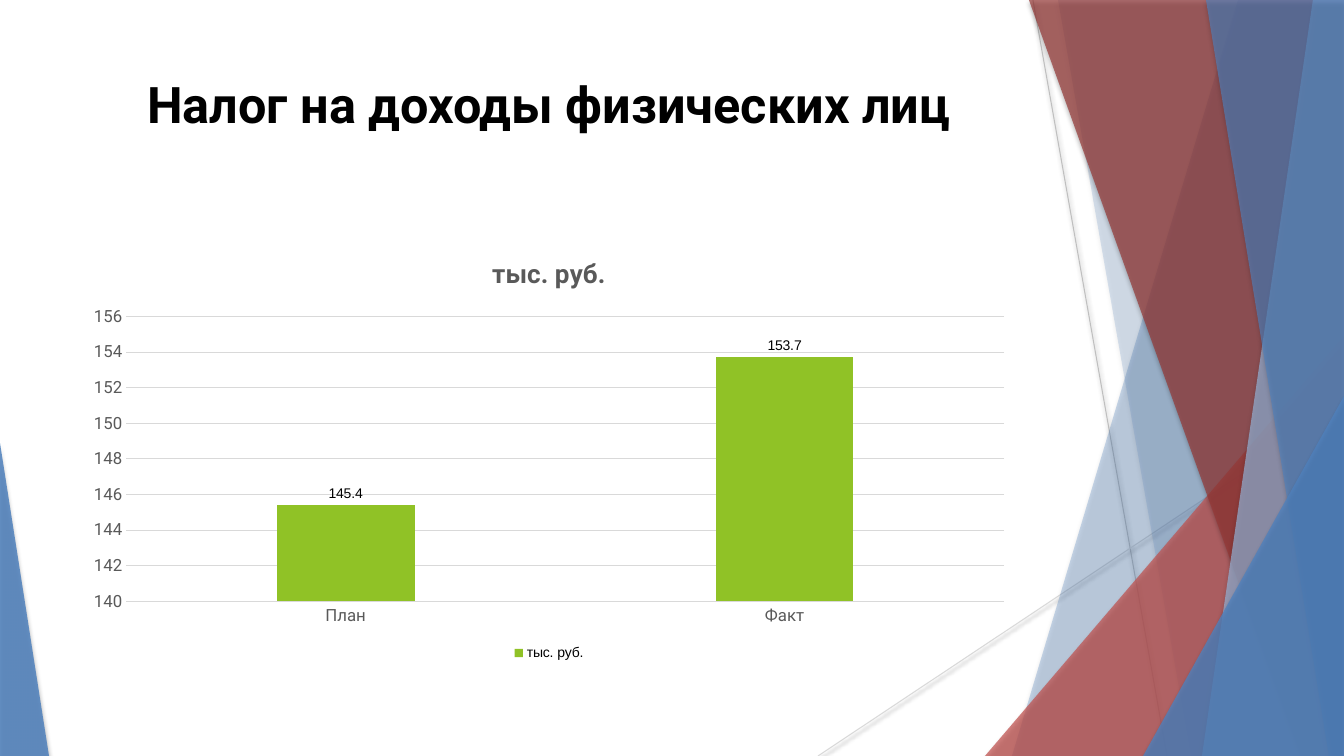
"""Builds a slide with a column chart of personal income tax, plan against fact."""
from lxml.etree import SubElement
from pptx import Presentation
from pptx.chart.data import CategoryChartData
from pptx.dml.color import RGBColor
from pptx.enum.chart import XL_CHART_TYPE, XL_LABEL_POSITION, XL_LEGEND_POSITION, XL_TICK_MARK
from pptx.enum.shapes import MSO_CONNECTOR, MSO_SHAPE
from pptx.enum.text import MSO_ANCHOR, PP_ALIGN
from pptx.oxml.ns import qn
from pptx.util import Pt

EMU_PER_PX = 914400 / 100.8
WIDTH, HEIGHT = 1344, 756


def px(length):
    return round(length * EMU_PER_PX)


def color(hex_string):
    return RGBColor.from_string(hex_string)


class Deck:
    FONT = "Roboto"
    LABEL_FONT = "Arial"
    BLACK, GRAY, GRID = "000000", "595959", "D9D9D9"
    BLUE, RED, DARK_RED, PALE_BLUE = "4F81BD", "C0504D", "953735", "95B3D7"
    GREEN = "90C226"

    def __init__(self):
        self.presentation = Presentation()
        self.presentation.slide_width = px(WIDTH)
        self.presentation.slide_height = px(HEIGHT)
        self.slide = self.presentation.slides.add_slide(self.presentation.slide_layouts[5])
        self.shapes = self.slide.shapes

    def style_font(self, font, size, hex_string, name=FONT, bold=False):
        font.size = Pt(size)
        font.color.rgb = color(hex_string)
        font.name = name
        font.bold = bold

    def add_shadow(self, effects, opacity, blur, distance):
        shadow = SubElement(effects, qn("a:outerShdw"), blurRad=str(Pt(blur)),
                            dist=str(Pt(distance)), dir="5400000", rotWithShape="0")
        black = SubElement(shadow, qn("a:srgbClr"), val=self.BLACK)
        SubElement(black, qn("a:alpha"), val=str(opacity * 1000))

    def paint(self, shape, hex_string, opacity):
        shape.fill.solid()
        shape.fill.fore_color.rgb = color(hex_string)
        shape.line.fill.background()
        shape.shadow.inherit = False
        properties = shape._element.spPr
        fill_color = properties.find(qn("a:solidFill")).find(qn("a:srgbClr"))
        SubElement(fill_color, qn("a:alpha"), val=str(opacity * 1000))
        self.add_shadow(properties.find(qn("a:effectLst")), 35, 3, 2)

    def ray(self, start, end, hex_string):
        line = self.shapes.add_connector(MSO_CONNECTOR.STRAIGHT, *map(px, start + end))
        line.line.color.rgb = color(hex_string)
        line.line.width = Pt(0.75)
        self.add_shadow(SubElement(line._element.spPr, qn("a:effectLst")), 38, 3.1, 1.6)

    def facet(self, top_x, bottom_x, hex_string, opacity):
        outline = self.shapes.build_freeform(top_x, 0, EMU_PER_PX)
        outline.add_line_segments([(WIDTH, 0), (WIDTH, HEIGHT), (bottom_x, HEIGHT)])
        self.paint(outline.convert_to_shape(), hex_string, opacity)

    def corner(self, left, top, width, apex, hex_string, opacity):
        triangle = self.shapes.add_shape(MSO_SHAPE.ISOSCELES_TRIANGLE, px(left), px(top),
                                         px(width), px(HEIGHT - top))
        triangle.adjustments[0] = apex
        self.paint(triangle, hex_string, opacity)

    def title(self, text, left, top, width, height):
        heading = self.shapes.title
        heading.left, heading.top = px(left), px(top)
        heading.width, heading.height = px(width), px(height)
        frame = heading.text_frame
        frame.text = text
        frame.word_wrap = True
        frame.vertical_anchor = MSO_ANCHOR.TOP
        frame.paragraphs[0].alignment = PP_ALIGN.CENTER
        self.style_font(frame.paragraphs[0].runs[0].font, 36, self.BLACK, bold=True)

    def column_chart(self, unit, amounts, left, top, width, height):
        data = CategoryChartData()
        data.categories = list(amounts)
        data.add_series(unit, list(amounts.values()))
        chart = self.shapes.add_chart(XL_CHART_TYPE.COLUMN_CLUSTERED, px(left), px(top),
                                      px(width), px(height), data).chart
        self.style_font(chart.font, 10, self.BLACK, self.LABEL_FONT)
        chart.has_title = True
        chart.chart_title.include_in_layout = False
        caption = chart.chart_title.text_frame
        caption.text = unit
        self.style_font(caption.paragraphs[0].runs[0].font, 18.6, self.GRAY, bold=True)
        chart.has_legend = True
        chart.legend.position = XL_LEGEND_POSITION.BOTTOM
        chart.legend.include_in_layout = False
        self.style_axes(chart)

        plot = chart.plots[0]
        plot.vary_by_categories = False
        plot.gap_width = 219
        plot.overlap = -27
        columns = plot.series[0]
        columns.format.fill.solid()
        columns.format.fill.fore_color.rgb = color(self.GREEN)
        labels = columns.data_labels
        labels.show_value = True
        labels.position = XL_LABEL_POSITION.OUTSIDE_END
        self.style_font(labels.font, 10, self.BLACK, self.LABEL_FONT)

    def style_axes(self, chart):
        for axis in (chart.category_axis, chart.value_axis):
            axis.major_tick_mark = XL_TICK_MARK.NONE
            axis.minor_tick_mark = XL_TICK_MARK.NONE
            self.style_font(axis.tick_labels.font, 12, self.GRAY)
        amount_axis = chart.value_axis
        amount_axis.minimum_scale = 140
        amount_axis.maximum_scale = 156
        amount_axis.major_unit = 2
        amount_axis.format.line.fill.background()
        for line in (chart.category_axis.format.line, amount_axis.major_gridlines.format.line):
            line.color.rgb = color(self.GRID)
            line.width = Pt(0.75)


def main():
    deck = Deck()
    deck.ray((1033, 0), (1167, HEIGHT), "BFBFBF")
    deck.ray((WIDTH, 406), (818, HEIGHT), deck.GRID)
    deck.facet(1238, 1012, deck.BLUE, 30)
    deck.facet(1058, 1191, deck.BLUE, 20)
    deck.corner(985, 336, 359, 1, deck.RED, 72)
    deck.facet(1029, 1301, deck.DARK_RED, 70)
    deck.facet(1313, 1202, deck.PALE_BLUE, 70)
    deck.facet(1206, 1329, deck.BLUE, 65)
    deck.corner(1143, 396, 201, 1, deck.BLUE, 80)
    deck.corner(0, 443, 49, 0, deck.BLUE, 85)
    deck.title("Налог на доходы физических лиц", 75, 68, 948, 145)
    deck.column_chart("тыс. руб.", {"План": 145.4, "Факт": 153.7}, 75, 238, 948, 427)
    deck.presentation.save("out.pptx")


if __name__ == "__main__":
    main()
